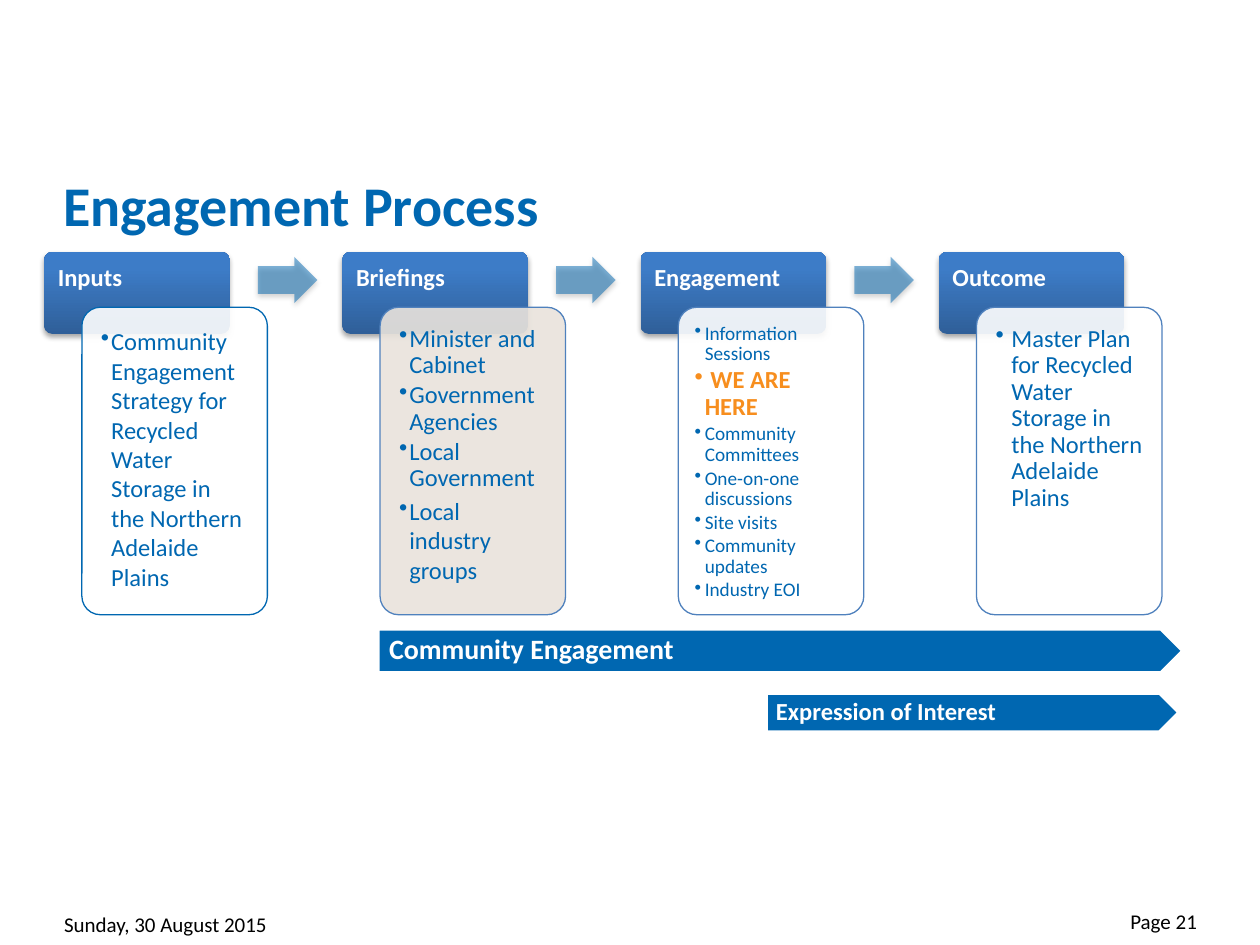
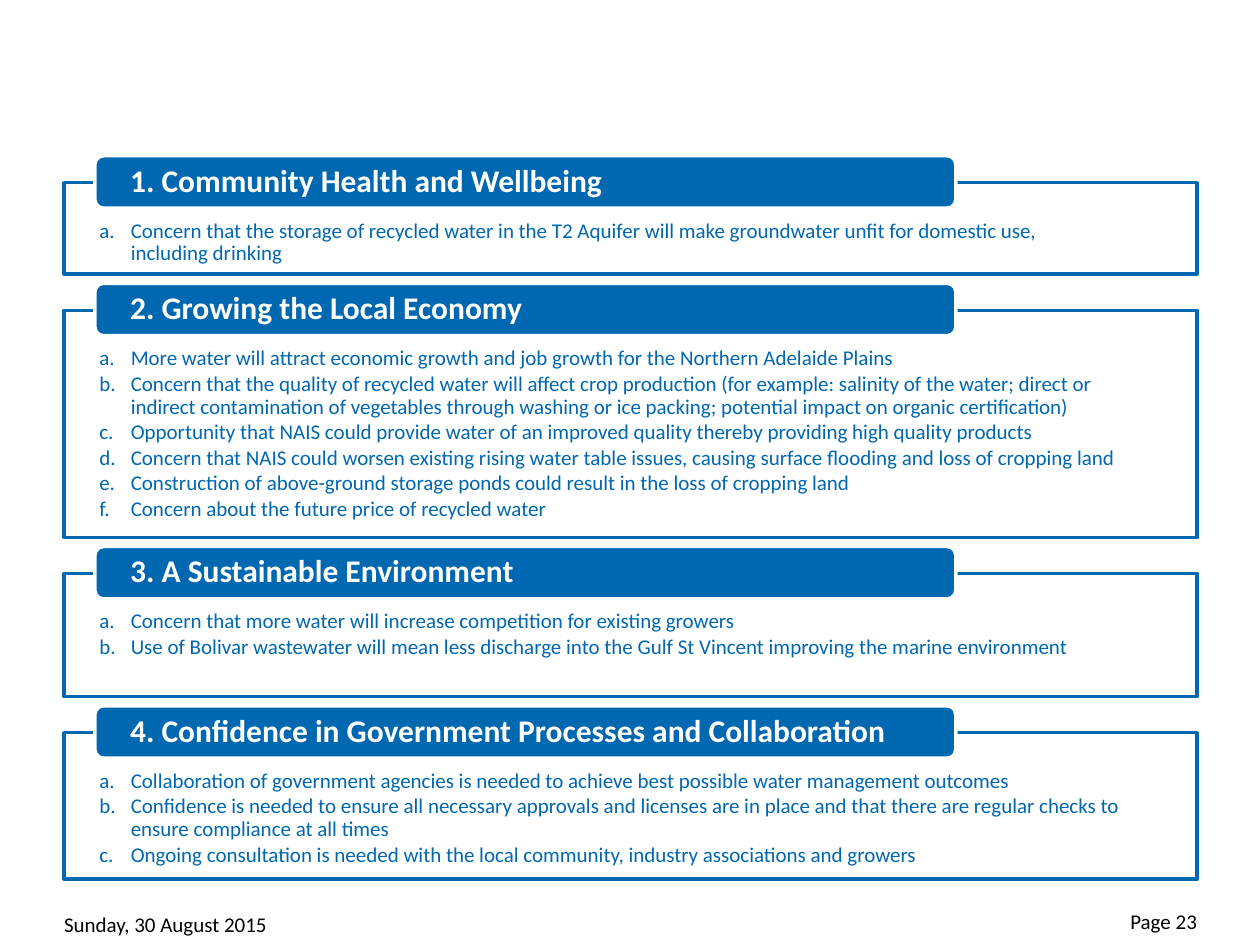
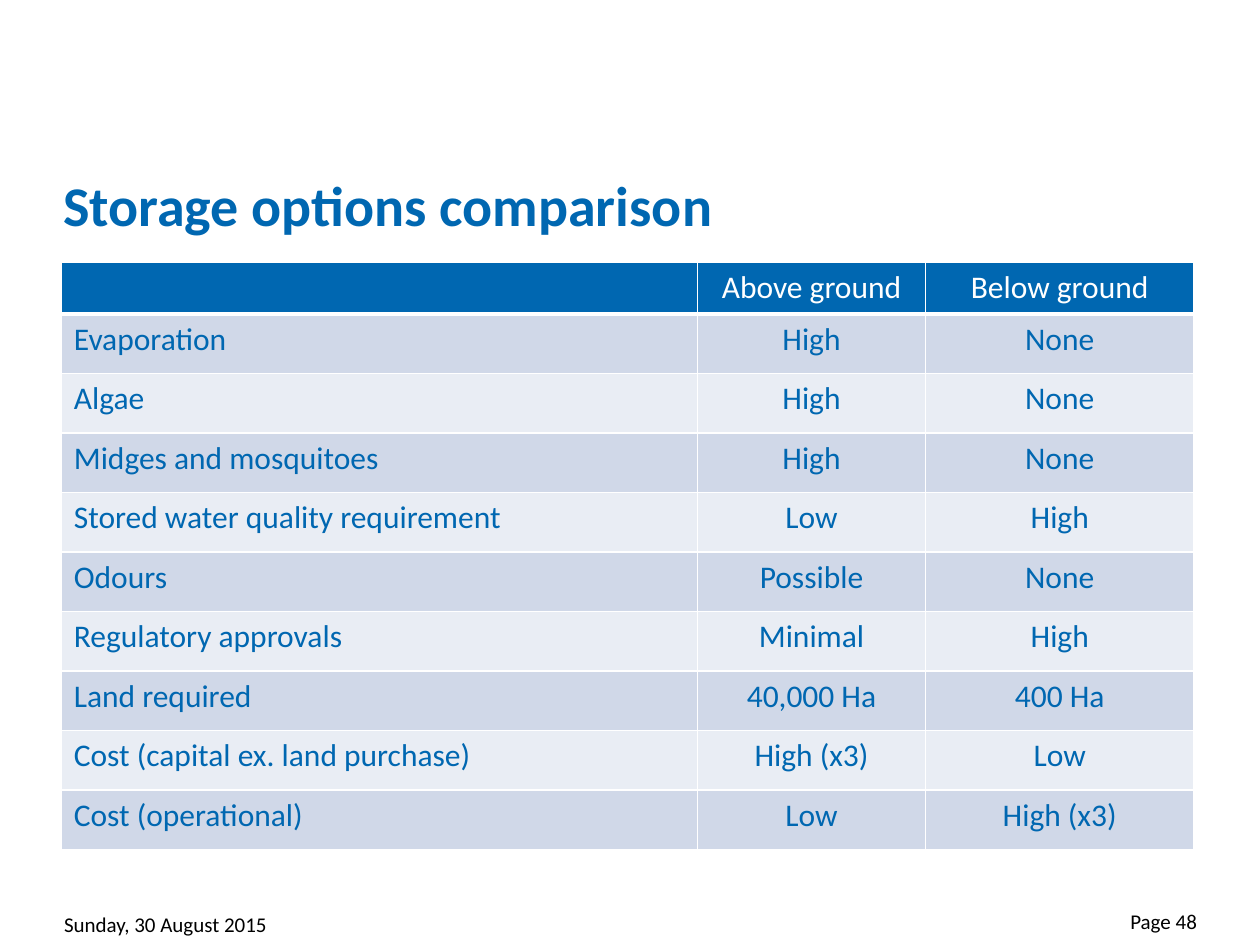
import pptx
import pptx.dml.color
import pptx.enum.dml
import pptx.enum.shapes
import pptx.enum.text
import pptx.oxml
import pptx.oxml.ns
import pptx.util
from lxml import etree

Pt = pptx.util.Pt
SHAPES = pptx.enum.shapes.MSO_SHAPE
ALIGN = pptx.enum.text.PP_ALIGN
ANCHOR = pptx.enum.text.MSO_ANCHOR

FONT = "Calibri"
BLUE, WHITE, BLACK, ORANGE = "0067B1", "FFFFFF", "000000", "F78E1E"
PANEL_LINE, SAND = "4F81BD", "E9E3DC"
HEADER_STOPS = [(0, "2F5F99"), (80, "3D7CC7"), (100, "3A7CCB")]
BAND_FILLS = ["D0D8E8", "E9EDF4"]
DATE = "Sunday, 30 August 2015"
LAYOUT_TITLE_ONLY, LAYOUT_BLANK = 5, 6

# A paragraph is a string, or a string with the formats that differ.
STAGES = [
    {"name": "Inputs", "line": BLUE, "items": [
        ("Community Engagement Strategy for Recycled Water Storage in the "
         "Northern Adelaide Plains", {"line_spacing": 1.0})]},
    {"name": "Briefings", "fill": SAND, "items": [
        "Minister and Cabinet", "Government Agencies", "Local Government",
        ("Local industry groups", {"line_spacing": 1.0})]},
    {"name": "Engagement", "size": 11, "inset": 6.2, "items": [
        "Information Sessions",
        (" WE ARE HERE", {"size": 14, "colour": ORANGE, "bold": True}),
        "Community Committees", "One-on-one discussions", "Site visits",
        "Community updates", "Industry EOI"]},
    {"name": "Outcome", "indent": 9, "items": [
        "Master Plan for Recycled Water Storage in the Northern Adelaide Plains"]},
]

# text, left, top, width, height, text size, left inset
BANNERS = [
    ("Community Engagement", 216, 359.3, 460, 25.2, 16, 6.4),
    ("Expression of Interest", 437.8, 396, 236, 22.3, 14, 5.6),
]

# heading, frame height, right inset, concerns
THEMES = [
    ("1. Community Health and Wellbeing", 52.3, 55, [
        "Concern that the storage of recycled water in the T2 Aquifer will make "
        "groundwater unfit for domestic use, including drinking"]),
    ("2. Growing the Local Economy", 129.8, 22, [
        "More water will attract economic growth and job growth for the Northern "
        "Adelaide Plains",
        "Concern that the quality of recycled water will affect crop production "
        "(for example: salinity of the water; direct or indirect contamination of "
        "vegetables through washing or ice packing; potential impact on organic "
        "certification)",
        "Opportunity that NAIS could provide water of an improved quality thereby "
        "providing high quality products",
        "Concern that NAIS could worsen existing rising water table issues, causing "
        "surface flooding and loss of cropping land",
        "Construction of above-ground storage ponds could result in the loss of "
        "cropping land",
        "Concern about the future price of recycled water"]),
    ("3. A Sustainable Environment", 70.4, 20, [
        "Concern that more water will increase competition for existing growers",
        "Use of Bolivar wastewater will mean less discharge into the Gulf St Vincent "
        "improving the marine environment"]),
    ("4. Confidence in Government Processes and Collaboration", 83.7, 20, [
        "Collaboration of government agencies is needed to achieve best possible "
        "water management outcomes",
        "Confidence is needed to ensure all necessary approvals and licenses are in "
        "place and that there are regular checks to ensure compliance at all times",
        "Ongoing consultation is needed with the local community, industry "
        "associations and growers"]),
]

STORAGE_COLUMNS = [363.6, 130.3, 153.4]
STORAGE_ROWS = [
    ("", "Above ground", "Below ground"),
    ("Evaporation", "High", "None"),
    ("Algae", "High", "None"),
    ("Midges and mosquitoes", "High", "None"),
    ("Stored water quality requirement", "Low", "High"),
    ("Odours", "Possible", "None"),
    ("Regulatory approvals", "Minimal", "High"),
    ("Land required", "40,000 Ha", "400 Ha"),
    ("Cost (capital ex. land purchase)", "High (x3)", "Low"),
    ("Cost (operational)", "Low", "High (x3)"),
]


def rgb(colour):
    return pptx.dml.color.RGBColor.from_string(colour)


def add_element(parent, tag, **attributes):
    element = etree.SubElement(parent, pptx.oxml.ns.qn(tag))
    for name, value in attributes.items():
        element.set(name, str(value))
    return element


def add_colour(parent, colour, **modifiers):
    """Append an RGB colour; modifiers such as alpha are percentages."""
    element = add_element(parent, "a:srgbClr", val=colour)
    for name, percent in modifiers.items():
        add_element(element, "a:" + name, val=percent * 1000)


def format_paragraph(paragraph, text, size=14, colour=BLUE, bold=False,
                     align=ALIGN.LEFT, line_spacing=None, after=0,
                     bullet=None, indent=0):
    """Fill a paragraph; after is a share of the text size."""
    paragraph.alignment = align
    if bullet:
        properties = paragraph._p.get_or_add_pPr()
        properties.set("marL", str(Pt(indent)))
        properties.set("indent", str(-Pt(indent)))
        if bullet == "letter":
            add_element(properties, "a:buAutoNum", type="alphaLcPeriod")
        else:
            add_element(properties, "a:buChar", char=bullet)
    if line_spacing:
        paragraph.line_spacing = line_spacing
    if after:
        paragraph.space_after = Pt(round(size * after, 1))
    run = paragraph.add_run()
    run.text = text
    run.font.name = FONT
    run.font.size = Pt(size)
    run.font.bold = bold
    run.font.color.rgb = rgb(colour)


def write_text(shape, paragraphs, insets=(0, 0, 0, 0), anchor=ANCHOR.MIDDLE, **text_format):
    """Write paragraphs; insets run left, top, right, bottom."""
    frame = shape.text_frame
    frame.clear()
    frame.word_wrap = True
    frame.auto_size = pptx.enum.text.MSO_AUTO_SIZE.NONE
    frame.vertical_anchor = anchor
    (frame.margin_left, frame.margin_top,
     frame.margin_right, frame.margin_bottom) = map(Pt, insets)
    for index, item in enumerate(paragraphs):
        text, changes = (item, {}) if isinstance(item, str) else item
        paragraph = frame.add_paragraph() if index else frame.paragraphs[0]
        format_paragraph(paragraph, text, **{**text_format, **changes})


def add_shape(slide, kind, box, fill=BLUE, opacity=100, line=None, line_width=0.75,
              stops=None, shadow=False, adjustments=()):
    shape = slide.shapes.add_shape(kind, *map(Pt, box))
    for index, value in enumerate(adjustments):
        shape.adjustments[index] = value
    if stops:
        shape.fill.gradient()
        shape.fill.gradient_angle = 90
        stop_list = shape._element.spPr.find(".//" + pptx.oxml.ns.qn("a:gsLst"))
        for old_stop in list(stop_list):
            stop_list.remove(old_stop)
        for position, colour in stops:
            add_colour(add_element(stop_list, "a:gs", pos=position * 1000), colour)
    else:
        shape.fill.solid()
        shape.fill.fore_color.rgb = rgb(fill)
        if opacity < 100:
            colour_element = shape._element.spPr.find(".//" + pptx.oxml.ns.qn("a:srgbClr"))
            add_element(colour_element, "a:alpha", val=opacity * 1000)
    if line:
        shape.line.color.rgb = rgb(line)
        shape.line.width = Pt(line_width)
    else:
        shape.line.fill.background()
    shape.shadow.inherit = False
    if shadow:
        effects = shape._element.spPr.find(pptx.oxml.ns.qn("a:effectLst"))
        outer = add_element(effects, "a:outerShdw", blurRad=Pt(3.1), dist=Pt(1.8),
                            dir=5400000, rotWithShape=0)
        add_colour(outer, BLACK, alpha=35)
    return shape


def add_slide(presentation, page, title=None):
    """Add a slide with its footer and, if given, its title."""
    layout = LAYOUT_TITLE_ONLY if title else LAYOUT_BLANK
    slide = presentation.slides.add_slide(presentation.slide_layouts[layout])
    if title:
        placeholder = slide.shapes.title
        placeholder.left, placeholder.top = Pt(36), Pt(93.6)
        placeholder.width, placeholder.height = Pt(648), Pt(46)
        write_text(placeholder, [title], size=32, bold=True)
    for text, left, top, align in [(DATE, 36.6, 513.4, ALIGN.LEFT),
                                   (f"Page {page}", 516, 512, ALIGN.RIGHT)]:
        box = slide.shapes.add_textbox(Pt(left), Pt(top), Pt(168), Pt(28.8))
        write_text(box, [text], size=12, colour=BLACK, align=align)
    return slide


def add_engagement_slide(presentation):
    slide = add_slide(presentation, 21, "Engagement Process")
    first_left, pitch, top, width = 25.2, 170.4, 144, 106
    for index, stage in enumerate(STAGES):
        left = first_left + index * pitch
        header = add_shape(slide, SHAPES.ROUNDED_RECTANGLE, (left, top, width, 46.8),
                           stops=HEADER_STOPS, shadow=True, adjustments=[0.1])
        write_text(header, [stage["name"]], insets=(6.5, 6.5, 6.5, 4), anchor=ANCHOR.TOP,
                   colour=WHITE, bold=True, line_spacing=0.9)
        panel = add_shape(slide, SHAPES.ROUNDED_RECTANGLE,
                          (left + 21.6, top + 31.6, width, 175.7),
                          fill=stage.get("fill", WHITE), opacity=90,
                          line=stage.get("line", PANEL_LINE), adjustments=[0.1])
        write_text(panel, stage["items"], insets=[stage.get("inset", 7.8)] * 4,
                   anchor=ANCHOR.TOP, size=stage.get("size", 14), line_spacing=0.9,
                   after=0.14, bullet="•", indent=stage.get("indent", 5.8))
        if index < len(STAGES) - 1:
            add_shape(slide, SHAPES.RIGHT_ARROW, (left + 122.2, top + 2.8, 34, 26.4),
                      opacity=50, shadow=True, adjustments=[0.6, 0.5])
    for text, left, top, width, height, size, inset in BANNERS:
        banner = add_shape(slide, SHAPES.PENTAGON, (left, top, width, height),
                           line=WHITE, line_width=2)
        write_text(banner, [text], insets=(inset, 3, 1.5, 3), size=size, colour=WHITE,
                   bold=True, line_spacing=0.9)


def add_themes_slide(presentation):
    slide = add_slide(presentation, 23)
    top, gap = 104.4, 20.6
    for heading, height, right_inset, concerns in THEMES:
        frame = add_shape(slide, SHAPES.RECTANGLE, (36.7, top, 647.3, height),
                          fill=WHITE, opacity=90, line=BLUE, line_width=2)
        write_text(frame, concerns, insets=(20, 21.3, right_inset, 7), anchor=ANCHOR.TOP,
                   size=12, line_spacing=0.9, after=0.14, bullet="letter", indent=18)
        tag = add_shape(slide, SHAPES.ROUNDED_RECTANGLE, (54.2, top - 15.4, 492, 30),
                        line=WHITE, line_width=2)
        write_text(tag, [heading], insets=(18.7, 0, 18.7, 0), size=18, colour=WHITE,
                   bold=True, line_spacing=0.9)
        top += height + gap


def add_border(cell, side, width):
    border = add_element(cell._tc.get_or_add_tcPr(), "a:ln" + side, w=Pt(width))
    add_colour(add_element(border, "a:solidFill"), WHITE)


def add_storage_slide(presentation):
    slide = add_slide(presentation, 48, "Storage options comparison")
    header_height, row_height = 29.5, 34
    table = slide.shapes.add_table(
        len(STORAGE_ROWS), len(STORAGE_COLUMNS), Pt(35), Pt(150),
        Pt(sum(STORAGE_COLUMNS)),
        Pt(header_height + row_height * (len(STORAGE_ROWS) - 1))).table
    for column, width in zip(table.columns, STORAGE_COLUMNS):
        column.width = Pt(width)
    for row_index, values in enumerate(STORAGE_ROWS):
        is_header = row_index == 0
        table.rows[row_index].height = Pt(header_height if is_header else row_height)
        for column_index, text in enumerate(values):
            cell = table.cell(row_index, column_index)
            for side in "LRTB":
                add_border(cell, side, 3 if is_header and side == "B" else 1)
            cell.fill.solid()
            cell.fill.fore_color.rgb = rgb(BLUE if is_header else BAND_FILLS[(row_index - 1) % 2])
            if text:
                format_paragraph(cell.text_frame.paragraphs[0], text, size=18,
                                 colour=WHITE if is_header else BLUE,
                                 align=ALIGN.CENTER if column_index else ALIGN.LEFT)


def main():
    presentation = pptx.Presentation()
    presentation.slide_width, presentation.slide_height = Pt(720), Pt(540)
    add_engagement_slide(presentation)
    add_themes_slide(presentation)
    add_storage_slide(presentation)
    presentation.save("out.pptx")


if __name__ == "__main__":
    main()
